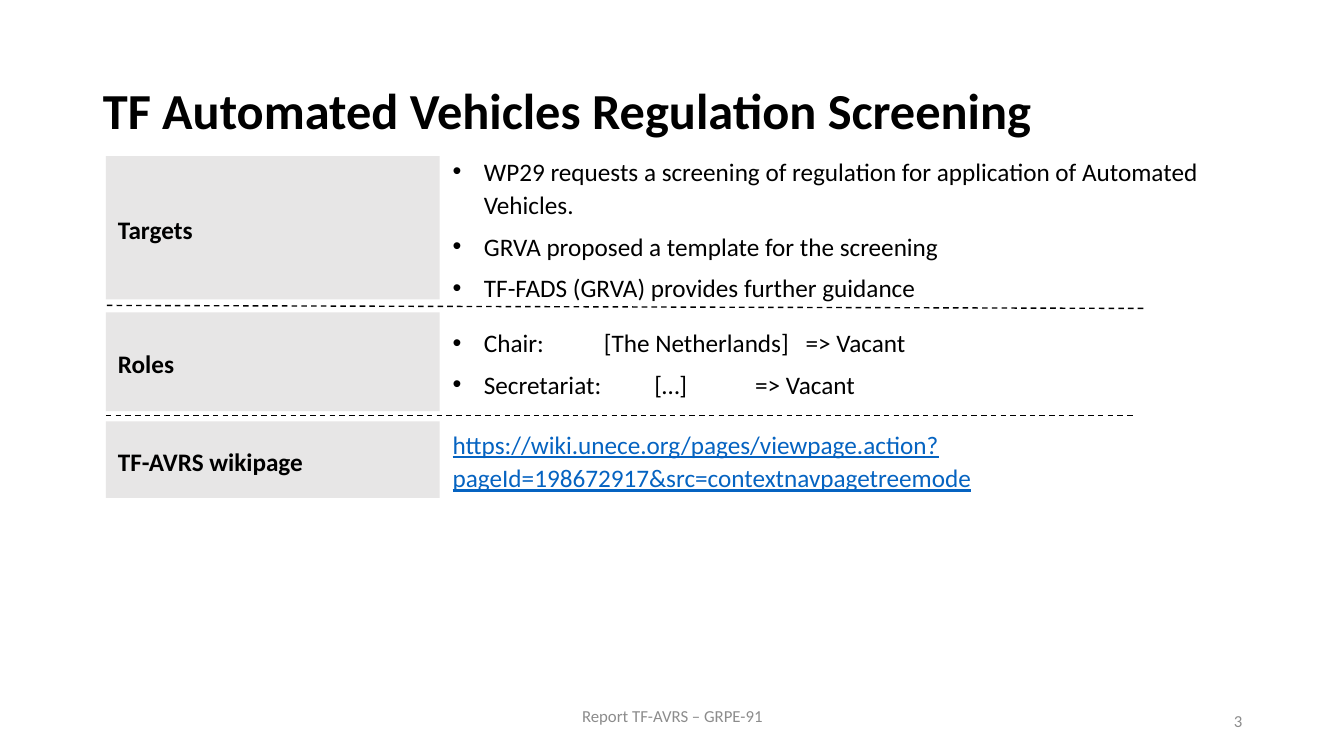
"""Build the task force overview slide."""
from lxml.etree import SubElement
from pptx import Presentation
from pptx.dml.color import RGBColor
from pptx.enum.dml import MSO_LINE_DASH_STYLE as Dash
from pptx.enum.shapes import MSO_CONNECTOR as Link, MSO_SHAPE as Shape
from pptx.enum.text import MSO_ANCHOR as Anchor, MSO_AUTO_SIZE as Auto, PP_ALIGN as Align
from pptx.oxml.ns import qn
from pptx.util import Inches, Pt

BLACK = RGBColor(0, 0, 0)
PALE = RGBColor(0xE7, 0xE6, 0xE6)
GREY = RGBColor(0x8C, 0x8C, 0x8C)
BLUE = RGBColor(0x05, 0x63, 0xC1)
FONT = "Calibri"

TITLE = "TF Automated Vehicles Regulation Screening"
ROWS = [
    ("Targets", 1.55, 1.42, 7.43, [
        "WP29 requests a screening of regulation for application of Automated Vehicles.",
        "GRVA proposed a template for the screening",
        "TF-FADS (GRVA) provides further guidance"]),
    ("Roles", 3.1, 0.98, 7.67, [
        "Chair: \t\t[The Netherlands] \t=> Vacant",
        "Secretariat: \t[…] \t\t=> Vacant"]),
    ("TF-AVRS wikipage", 4.18, 0.76, 7.03, [
        "https://wiki.unece.org/pages/viewpage.action?pageId=198672917&src=contextnavpagetreemode"]),
]
RULES = [(1.06, 3.03, 11.35, 3.06), (1.05, 4.12, 11.26, 4.12)]
FOOTER = [
    ("3", 9.42, 3, Align.RIGHT, Anchor.MIDDLE),
    ("Report TF-AVRS – GRPE-91", 4.42, 4.5, Align.CENTER, Anchor.TOP),
]
LEFT, WIDE, BODY = 1.05, 3.31, 4.49


def write(para, text, size, color=BLACK, bold=False, line=False):
    """Add one formatted run."""
    run = para.add_run()
    run.text = text
    font = run.font
    font.name, font.size, font.bold = FONT, Pt(size), bold
    font.underline = line
    font.color.rgb = color


def setup(shape, anchor, pad=None):
    """Set wrapping, anchor and margins of a text frame."""
    frame = shape.text_frame
    frame.word_wrap = True
    frame.auto_size = Auto.NONE
    frame.vertical_anchor = anchor
    if pad:
        frame.margin_left = frame.margin_right = Inches(pad[0])
        frame.margin_top = frame.margin_bottom = Inches(pad[1])
    return frame


def space(para):
    """Set the spacing shared by the table rows."""
    para.alignment = Align.LEFT
    para.line_spacing = 1.1
    para.space_before = Pt(6)


def bullet(para):
    """Give a paragraph a hanging bullet."""
    props = para._p.get_or_add_pPr()
    props.set("marL", str(Inches(0.31)))
    props.set("indent", str(-Inches(0.31)))
    SubElement(props, qn("a:buFont")).set("typeface", "Arial")
    SubElement(props, qn("a:buChar")).set("char", "•")


def add_row(slide, name, top, high, wide, lines):
    """Add a grey label and the text beside it."""
    label = slide.shapes.add_shape(
        Shape.RECTANGLE, Inches(LEFT), Inches(top), Inches(WIDE), Inches(high))
    label.shadow.inherit = False
    label.fill.solid()
    label.fill.fore_color.rgb = PALE
    label.line.fill.background()
    para = setup(label, Anchor.MIDDLE, (0.12, 0.08)).paragraphs[0]
    space(para)
    write(para, name, 18, bold=True)

    box = slide.shapes.add_textbox(
        Inches(BODY), Inches(top), Inches(wide), Inches(high))
    frame = setup(box, Anchor.MIDDLE, (0, 0))
    for num, text in enumerate(lines):
        para = frame.add_paragraph() if num else frame.paragraphs[0]
        space(para)
        url = text.startswith("https")
        if not url:
            bullet(para)
        write(para, text, 18, BLUE if url else BLACK, line=url)


def add_rule(slide, ends):
    """Add a dashed divider."""
    rule = slide.shapes.add_connector(Link.STRAIGHT, *map(Inches, ends))
    rule.line.color.rgb = BLACK
    rule.line.width = Pt(1)
    rule.line.dash_style = Dash.DASH
    SubElement(rule._element.spPr, qn("a:effectLst"))


def main():
    """Build and save the slide."""
    deck = Presentation()
    deck.slide_width, deck.slide_height = Inches(13.33), Inches(7.5)
    slide = deck.slides.add_slide(deck.slide_layouts[5])

    title = slide.shapes.title
    title.left, title.top = Inches(0.92), Inches(0.4)
    title.width, title.height = Inches(11.5), Inches(1.45)
    para = setup(title, Anchor.MIDDLE).paragraphs[0]
    para.alignment = Align.LEFT
    para.line_spacing = 0.9
    write(para, TITLE, 36, bold=True)

    for ends in RULES:
        add_rule(slide, ends)
    for row in ROWS:
        add_row(slide, *row)
    for text, left, wide, align, anchor in FOOTER:
        box = slide.shapes.add_textbox(
            Inches(left), Inches(6.95), Inches(wide), Inches(0.4))
        para = setup(box, anchor).paragraphs[0]
        para.alignment = align
        write(para, text, 12, GREY)
    deck.save("out.pptx")


if __name__ == "__main__":
    main()
